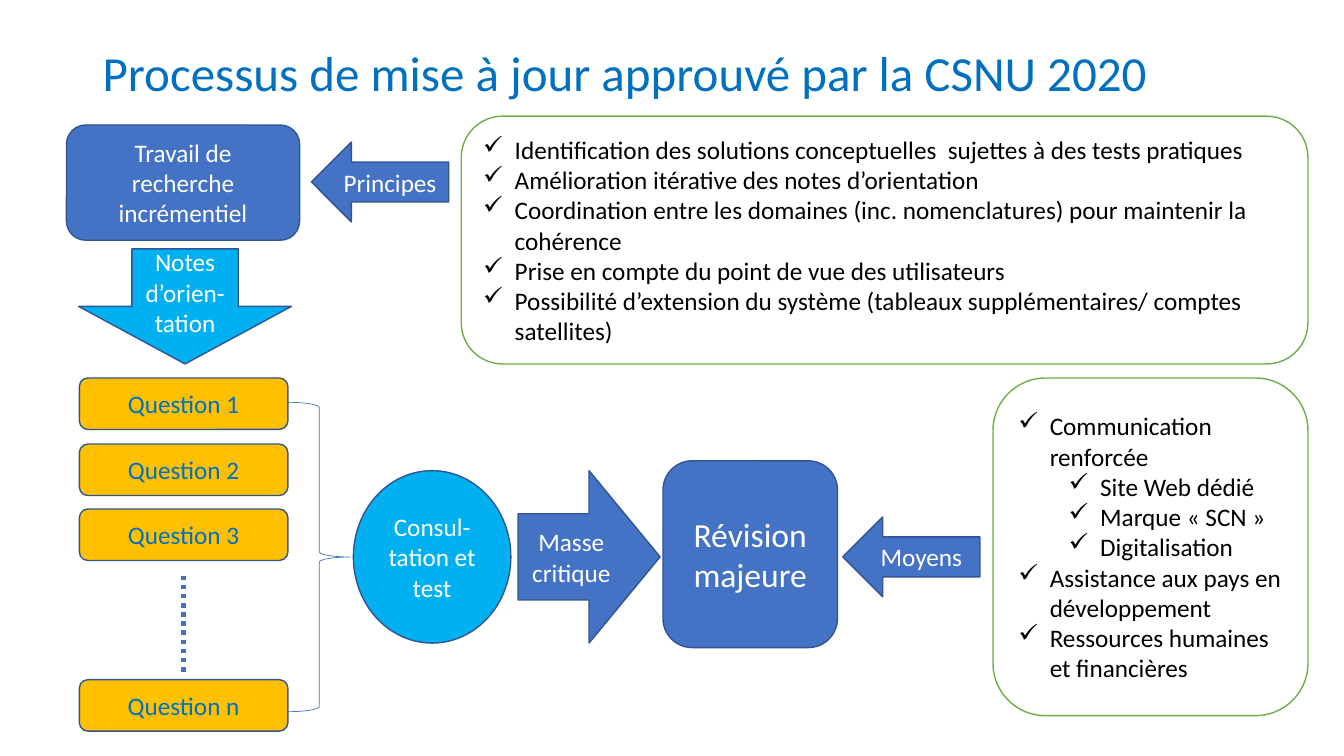
from lxml import etree
from pptx import Presentation
from pptx.dml.color import RGBColor
from pptx.enum import dml, shapes, text
from pptx.oxml import ns
from pptx.util import Pt

FONT = "Calibri"
WHITE = RGBColor(0xFF, 0xFF, 0xFF)
BLACK = RGBColor(0, 0, 0)
TITLE_BLUE = RGBColor(0x00, 0x70, 0xC0)
BLUE = RGBColor(0x44, 0x72, 0xC4)
DARK_BLUE = RGBColor(0x32, 0x54, 0x91)
SKY = RGBColor(0x00, 0xB0, 0xF0)
AMBER = RGBColor(0xFF, 0xC0, 0x00)
GREEN = RGBColor(0x70, 0xAD, 0x47)
KIND = shapes.MSO_SHAPE

TITLE = "Processus de mise à jour approuvé par la CSNU 2020"
STEPS = [
    ("Travail de recherche incrémentiel", KIND.ROUNDED_RECTANGLE, (47.5, 89.3, 166.5, 82.3), BLUE, 18),
    ("Principes", KIND.LEFT_ARROW, (222.5, 101.5, 98, 57), BLUE, 18),
    ("Notes d’orien-tation", KIND.DOWN_ARROW, (56.2, 177.8, 152, 82.2), SKY, 18),
    ("Révision majeure", KIND.ROUNDED_RECTANGLE, (473.6, 329.2, 124.6, 133.4), BLUE, 24),
    ("Masse critique", KIND.RIGHT_ARROW, (370, 336.2, 101.5, 123.2), BLUE, 18),
    ("Consul-tation et test", KIND.OVAL, (252.4, 336.2, 112.5, 123.2), SKY, 18),
    ("Moyens", KIND.LEFT_ARROW, (602, 369.3, 98, 57), BLUE, 18),
]
QUESTIONS = [("Question 1", 270), ("Question 2", 317.2), ("Question 3", 363.6), ("Question n", 485.5)]
QUESTION_LEFT, QUESTION_WIDTH, QUESTION_HEIGHT = 56.7, 149, 36.8
DOTS_TOP, DOTS_BOTTOM = 411.2, 481.5
BRACE_WIDTH = 44.6
CHECKLISTS = [
    ((329.5, 83, 604.8, 177), [
        (0, "Identification des solutions conceptuelles  sujettes à des tests pratiques"),
        (0, "Amélioration itérative des notes d’orientation"),
        (0, "Coordination entre les domaines (inc. nomenclatures) pour maintenir la cohérence"),
        (0, "Prise en compte du point de vue des utilisateurs"),
        (0, "Possibilité d’extension du système (tableaux supplémentaires/ comptes satellites)"),
    ]),
    ((709.3, 270, 225, 241.2), [
        (0, "Communication renforcée"),
        (1, "Site Web dédié"),
        (1, "Marque « SCN »"),
        (1, "Digitalisation"),
        (0, "Assistance aux pays en développement"),
        (0, "Ressources humaines et financières"),
    ]),
]
HANGING, LEVEL_INDENT = 22.5, 36


def style(paragraph, size, color, alignment):
    paragraph.font.name = FONT
    paragraph.font.size = Pt(size)
    paragraph.font.color.rgb = color
    paragraph.alignment = alignment


def add_box(slide, kind, box, fill, line, width=1):
    shape = slide.shapes.add_shape(kind, *map(Pt, box))
    shape.shadow.inherit = False
    if fill is None:
        shape.fill.background()
    else:
        shape.fill.solid()
        shape.fill.fore_color.rgb = fill
    shape.line.color.rgb = line
    shape.line.width = Pt(width)
    shape.text_frame.word_wrap = True
    shape.text_frame.vertical_anchor = text.MSO_ANCHOR.MIDDLE
    return shape


def add_label(slide, label, kind, box, fill, size, color=WHITE):
    shape = add_box(slide, kind, box, fill, DARK_BLUE)
    shape.text_frame.text = label
    style(shape.text_frame.paragraphs[0], size, color, text.PP_ALIGN.CENTER)


def add_checklist(slide, box, items):
    frame = add_box(slide, KIND.ROUNDED_RECTANGLE, box, WHITE, GREEN).text_frame
    frame.text = "\n".join(item for level, item in items)
    for paragraph, (level, item) in zip(frame.paragraphs, items):
        style(paragraph, 18, BLACK, text.PP_ALIGN.LEFT)
        paragraph.level = level
        properties = paragraph._p.get_or_add_pPr()
        properties.set("marL", str(Pt(HANGING + level * LEVEL_INDENT)))
        properties.set("indent", str(-Pt(HANGING)))
        bullet = etree.Element(ns.qn("a:buChar"), char="✓")
        properties.insert_element_before(bullet, "a:tabLst", "a:defRPr", "a:extLst")


def add_title(slide):
    frame = slide.shapes.add_textbox(Pt(66.2), Pt(31.7), Pt(829.4), Pt(48)).text_frame
    frame.word_wrap = True
    frame.text = TITLE
    paragraph = frame.paragraphs[0]
    style(paragraph, 35, TITLE_BLUE, text.PP_ALIGN.LEFT)
    paragraph.line_spacing = 0.9


def add_questions(slide):
    for label, top in QUESTIONS:
        box = (QUESTION_LEFT, top, QUESTION_WIDTH, QUESTION_HEIGHT)
        add_label(slide, label, KIND.ROUNDED_RECTANGLE, box, AMBER, 18, TITLE_BLUE)

    center = Pt(QUESTION_LEFT + QUESTION_WIDTH / 2)
    dots = slide.shapes.add_connector(
        shapes.MSO_CONNECTOR.STRAIGHT, center, Pt(DOTS_TOP), center, Pt(DOTS_BOTTOM))
    dots.line.color.rgb = BLUE
    dots.line.width = Pt(3.25)
    dots.line.dash_style = dml.MSO_LINE.ROUND_DOT
    etree.SubElement(dots._element.spPr, ns.qn("a:effectLst"))

    first, last = QUESTIONS[0][1], QUESTIONS[-1][1]
    brace = (QUESTION_LEFT + QUESTION_WIDTH, first + QUESTION_HEIGHT / 2 - 1, BRACE_WIDTH, last - first + 5.5)
    add_box(slide, KIND.RIGHT_BRACE, brace, None, BLUE, 0.5)


def main():
    presentation = Presentation()
    presentation.slide_width, presentation.slide_height = Pt(960), Pt(540)
    slide = presentation.slides.add_slide(presentation.slide_layouts[6])
    add_title(slide)
    for step in STEPS:
        add_label(slide, *step)
    for box, items in CHECKLISTS:
        add_checklist(slide, box, items)
    add_questions(slide)
    presentation.save("out.pptx")


if __name__ == "__main__":
    main()
